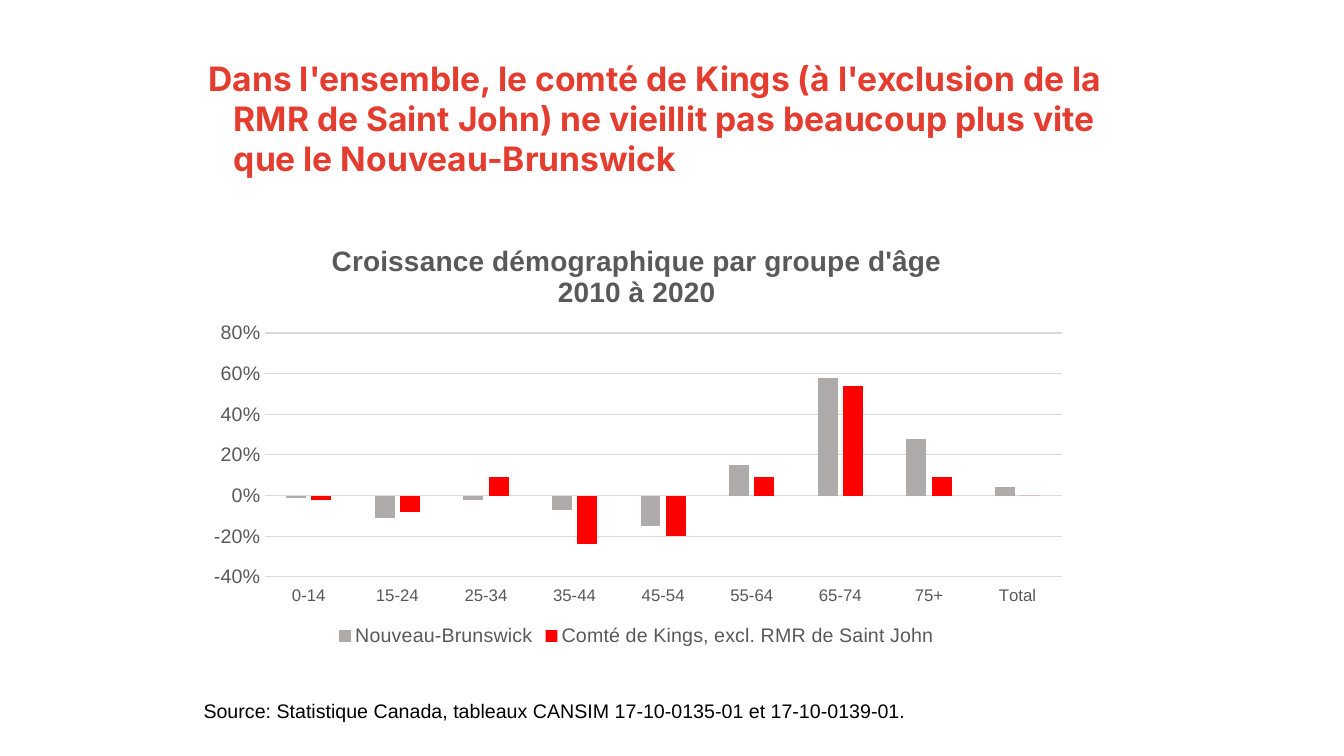
import pptx
import pptx.chart.data
import pptx.dml.color
import pptx.enum.chart
import pptx.enum.text
import pptx.oxml
import pptx.util
from lxml import etree

Cm = pptx.util.Cm
Pt = pptx.util.Pt
RGBColor = pptx.dml.color.RGBColor

RED_TITLE = RGBColor(0xE4, 0x3D, 0x30)
BLACK = RGBColor(0, 0, 0)
DARK_GREY = RGBColor(0x59, 0x59, 0x59)
LIGHT_GREY = RGBColor(0xD9, 0xD9, 0xD9)
BAR_GREY = RGBColor(0xAF, 0xAB, 0xAB)
BAR_RED = RGBColor(0xFF, 0, 0)

AGES = ["0-14", "15-24", "25-34", "35-44", "45-54", "55-64", "65-74", "75+", "Total"]
GROWTH = [
    ("Nouveau-Brunswick", BAR_GREY,
     [-0.01, -0.11, -0.02, -0.07, -0.15, 0.15, 0.58, 0.28, 0.04]),
    ("Comté de Kings, excl. RMR de Saint John", BAR_RED,
     [-0.02, -0.08, 0.09, -0.24, -0.2, 0.09, 0.54, 0.09, 0]),
]


def style_font(font, size, color, name="Arial", bold=False):
    font.name = name
    font.size = Pt(size)
    font.bold = bold
    font.color.rgb = color


def write(p, text, **fmt):
    r = p.add_run()
    r.text = text
    style_font(r.font, **fmt)


def style_line(line):
    line.color.rgb = LIGHT_GREY
    line.width = Pt(0.75)


class SlideBuilder:
    def __init__(self, prs):
        self.slide = prs.slides.add_slide(prs.slide_layouts[5])

    def title(self, text, left, top, width, height):
        sp = self.slide.shapes.title
        sp.left, sp.top, sp.width, sp.height = left, top, width, height
        tf = sp.text_frame
        tf.word_wrap = True
        tf.auto_size = pptx.enum.text.MSO_AUTO_SIZE.NONE
        tf.vertical_anchor = pptx.enum.text.MSO_ANCHOR.TOP
        p = tf.paragraphs[0]
        p.alignment = pptx.enum.text.PP_ALIGN.LEFT
        pPr = p._p.get_or_add_pPr()
        pPr.set("marL", str(Cm(1.27)))
        pPr.set("indent", str(-Cm(0.64)))
        write(p, text, size=24, color=RED_TITLE, name="Inter", bold=True)

    def text(self, text, left, top, width, height):
        tf = self.slide.shapes.add_textbox(left, top, width, height).text_frame
        tf.word_wrap = True
        tf.auto_size = pptx.enum.text.MSO_AUTO_SIZE.SHAPE_TO_FIT_TEXT
        write(tf.paragraphs[0], text, size=14, color=BLACK)

    def column_chart(self, title_lines, cats, series, left, top, width, height):
        data = pptx.chart.data.CategoryChartData(number_format="0%")
        data.categories = cats
        for name, _, values in series:
            data.add_series(name, values)
        kind = pptx.enum.chart.XL_CHART_TYPE.COLUMN_CLUSTERED
        chart = self.slide.shapes.add_chart(kind, left, top, width, height, data).chart
        style_font(chart.font, 10, BLACK)

        chart.has_title = True
        tf = chart.chart_title.text_frame
        for i, line in enumerate(title_lines):
            p = tf.add_paragraph() if i else tf.paragraphs[0]
            write(p, line, size=20, color=DARK_GREY, bold=True)
        chart.chart_title.include_in_layout = False

        chart.has_legend = True
        chart.legend.position = pptx.enum.chart.XL_LEGEND_POSITION.BOTTOM
        chart.legend.include_in_layout = False
        style_font(chart.legend.font, 14, DARK_GREY)

        plot = chart.plots[0]
        plot.gap_width = 219
        plot.overlap = -27
        plot.vary_by_categories = False
        for ser, (_, color, _) in zip(plot.series, series):
            ser.invert_if_negative = False
            ser.format.fill.solid()
            ser.format.fill.fore_color.rgb = color
        self.axes(chart)
        self.plot_layout(chart, x=0.08, y=0.25, w=0.9, h=0.575)

    def axes(self, chart):
        cat, val = chart.category_axis, chart.value_axis
        for axis, size in ((cat, 12), (val, 14)):
            axis.major_tick_mark = pptx.enum.chart.XL_TICK_MARK.NONE
            axis.minor_tick_mark = pptx.enum.chart.XL_TICK_MARK.NONE
            style_font(axis.tick_labels.font, size, DARK_GREY)
        cat.tick_label_position = pptx.enum.chart.XL_TICK_LABEL_POSITION.LOW
        style_line(cat.format.line)
        val.minimum_scale, val.maximum_scale, val.major_unit = -0.4, 0.8, 0.2
        val.tick_labels.number_format = "0%"
        val.tick_labels.number_format_is_linked = False
        val.format.line.fill.background()
        val.has_major_gridlines = True
        style_line(val.major_gridlines.format.line)

    def plot_layout(self, chart, **box):
        area = chart._chartSpace.chart.plotArea
        for old in area.findall(pptx.oxml.ns.qn("c:layout")):
            area.remove(old)
        layout = pptx.oxml.ns.qn("c:layout")
        area.insert(0, area.makeelement(layout))
        manual = etree.SubElement(area[0], pptx.oxml.ns.qn("c:manualLayout"))
        settings = {"layoutTarget": "inner", "xMode": "edge", "yMode": "edge", **box}
        for tag, value in settings.items():
            etree.SubElement(manual, pptx.oxml.ns.qn("c:" + tag)).set("val", str(value))


def main():
    prs = pptx.Presentation()
    prs.slide_width, prs.slide_height = Cm(33.87), Cm(19.05)
    s = SlideBuilder(prs)
    s.title("Dans l'ensemble, le comté de Kings (à l'exclusion de la RMR de Saint John) "
            "ne vieillit pas beaucoup plus vite que le Nouveau-Brunswick",
            Cm(4.37), Cm(1.32), Cm(24.66), Cm(3.94))
    s.text("Source: Statistique Canada, tableaux CANSIM 17-10-0135-01 et 17-10-0139-01.",
           Cm(4.88), Cm(17.48), Cm(23.77), Cm(0.86))
    s.column_chart(["Croissance démographique par groupe d'âge", "2010 à 2020"],
                   AGES, GROWTH, Cm(4.88), Cm(5.72), Cm(22.33), Cm(10.69))
    prs.save("out.pptx")


if __name__ == "__main__":
    main()
